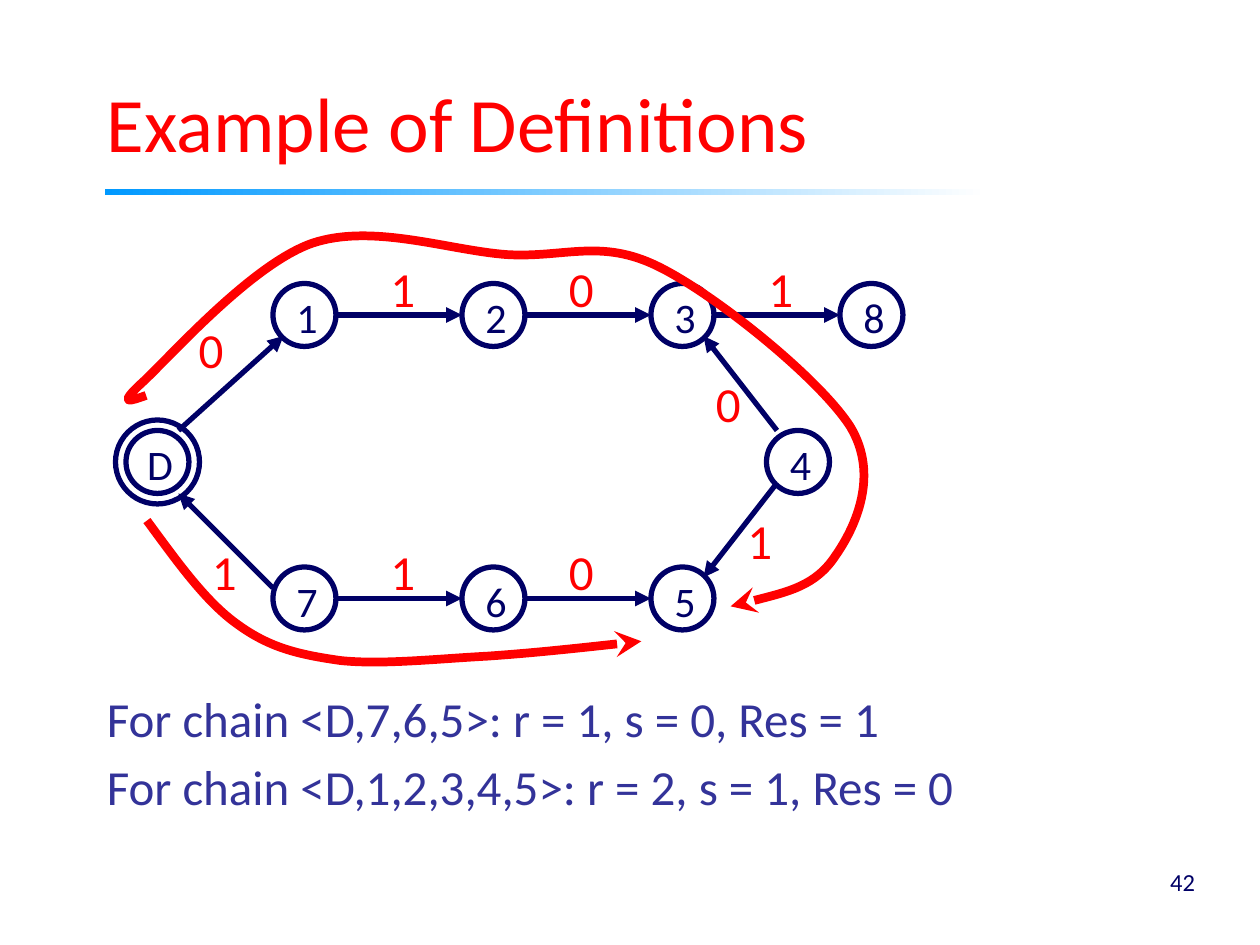
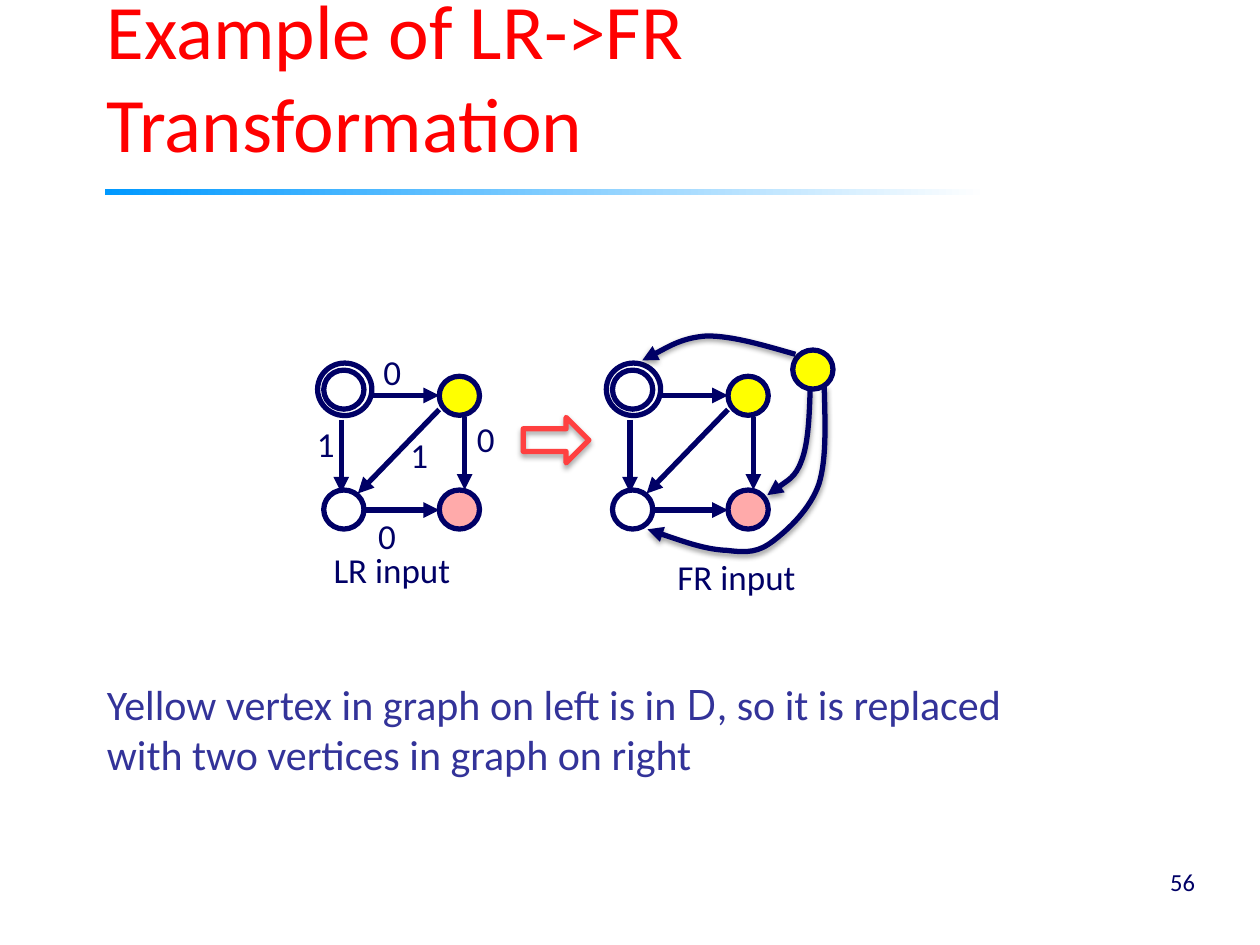
from pptx import Presentation
from pptx.dml.color import RGBColor
from pptx.enum.shapes import MSO_CONNECTOR, MSO_SHAPE
from pptx.enum.text import MSO_ANCHOR, PP_ALIGN
from pptx.oxml.ns import qn
from pptx.util import Pt
from lxml.etree import SubElement

NAVY, RED, INDIGO = "000066", "FF0000", "333399"
YELLOW, PINK, ARROW_RED = "FFFF00", "FFAAAA", "FF4040"
FORMATS = {
    "title": ({"size": Pt(44), "name": "Calibri"}, RED),
    "body": ({"size": Pt(28), "name": "Calibri"}, INDIGO),
    "note": ({"size": Pt(24), "name": "Calibri"}, INDIGO),
    "note symbol": ({"size": Pt(24), "name": "Open Sans"}, INDIGO),
    "number": ({"size": Pt(14), "name": "Calibri"}, NAVY),
    "node": ({"size": Pt(24), "name": "Calibri"}, NAVY),
    "bit": ({"size": Pt(28), "name": "Calibri"}, RED),
    "caption": ({"size": Pt(20), "name": "Calibri"}, NAVY),
}


def color(value):
    return RGBColor.from_string(value)


class Deck:
    """Hold the shared style and the current slide, and draw each kind of element."""

    def __init__(self):
        self.presentation = Presentation()
        self.presentation.slide_width = Pt(720)
        self.presentation.slide_height = Pt(540)
        self.slide = None

    def start_slide(self, title, number):
        self.slide = self.presentation.slides.add_slide(self.presentation.slide_layouts[6])
        rule = self.slide.shapes.add_shape(MSO_SHAPE.RECTANGLE, Pt(60), Pt(108), Pt(504), Pt(3.6))
        rule.shadow.inherit = False
        rule.line.fill.background()
        rule.fill.gradient()
        rule.fill.gradient_angle = 0
        for stop, value in zip(rule.fill.gradient_stops, ("0099FF", "FFFFFF")):
            stop.color.rgb = color(value)
        self.text(54, 12, 612, 87.4, [title], "title", vertical_anchor=MSO_ANCHOR.BOTTOM)
        self.text(540, 486, 150, 36, [number], "number", PP_ALIGN.RIGHT,
                  vertical_anchor=MSO_ANCHOR.MIDDLE)

    def add_words(self, paragraph, content, style):
        runs = [(content, style)] if isinstance(content, str) else content
        for words, run_style in runs:
            run = paragraph.add_run()
            run.text = words
            values, value = FORMATS[run_style]
            for key, setting in values.items():
                setattr(run.font, key, setting)
            run.font.color.rgb = color(value)

    def text(self, left, top, width, height, lines, style,
             alignment=PP_ALIGN.LEFT, space=0, **frame_values):
        shape = self.slide.shapes.add_textbox(Pt(left), Pt(top), Pt(width), Pt(height))
        frame = shape.text_frame
        for key, setting in ({"word_wrap": True} | frame_values).items():
            setattr(frame, key, setting)
        for index, content in enumerate(lines):
            paragraph = frame.add_paragraph() if index else frame.paragraphs[0]
            paragraph.alignment = alignment
            if index and space:
                paragraph.space_before = Pt(space)
            self.add_words(paragraph, content, style)

    def outline(self, shape, value, width=3):
        shape.line.color.rgb = color(value)
        shape.line.width = Pt(width)

    def add_head(self, shape, head):
        SubElement(shape._element.spPr.find(qn("a:ln")), qn("a:tailEnd"), type=head)

    def add_shadow(self, shape, alpha, distance):
        effects = shape._element.spPr.find(qn("a:effectLst"))
        shadow = SubElement(effects, qn("a:outerShdw"), blurRad=str(Pt(3.1)),
                            dist=str(Pt(distance)), dir="5400000", rotWithShape="0")
        black = SubElement(shadow, qn("a:srgbClr"), val="000000")
        SubElement(black, qn("a:alpha"), val=str(alpha * 1000))

    def shape(self, kind, left, top, width, height, line=NAVY, fill=None):
        shape = self.slide.shapes.add_shape(kind, Pt(left), Pt(top), Pt(width), Pt(height))
        shape.shadow.inherit = False
        if fill:
            shape.fill.solid()
            shape.fill.fore_color.rgb = color(fill)
        else:
            shape.fill.background()
        self.outline(shape, line)
        return shape

    def node(self, left, top, width, height, label="", fill=None):
        shape = self.shape(MSO_SHAPE.OVAL, left, top, width, height, fill=fill)
        if label:
            frame = shape.text_frame
            values = {"word_wrap": False, "vertical_anchor": MSO_ANCHOR.MIDDLE,
                      "margin_left": Pt(3), "margin_right": 0,
                      "margin_top": Pt(2), "margin_bottom": 0}
            for key, setting in values.items():
                setattr(frame, key, setting)
            frame.paragraphs[0].alignment = PP_ALIGN.CENTER
            self.add_words(frame.paragraphs[0], label, "node")

    def edge(self, *ends):
        connector = self.slide.shapes.add_connector(MSO_CONNECTOR.STRAIGHT, *map(Pt, ends))
        self.outline(connector, NAVY)
        self.add_head(connector, "triangle")
        SubElement(connector._element.spPr, qn("a:effectLst"))

    def curve(self, points, line=NAVY, width=3, head="triangle"):
        """Draw a chain of Bézier arcs: a start, then two handles and an end for each arc."""
        start, *rest = [(Pt(x), Pt(y)) for x, y in points]
        builder = self.slide.shapes.build_freeform(*start)
        builder.add_line_segments(rest, close=False)
        shape = builder.convert_to_shape()
        outline = next(shape._element.iter(qn("a:path")))
        for index, segment in enumerate(outline.findall(qn("a:lnTo"))):
            if index % 3 == 0:
                arc = SubElement(outline, qn("a:cubicBezTo"))
            arc.append(segment[0])
            outline.remove(segment)
        shape.shadow.inherit = False
        shape.fill.background()
        self.outline(shape, line, width)
        self.add_head(shape, head)
        return shape


def definitions_slide(deck):
    deck.start_slide("Example of Definitions", "42")
    deck.text(54, 390, 621, 84, ["For chain <D,7,6,5>: r = 1, s = 0, Res = 1",
                                 "For chain <D,1,2,3,4,5>: r = 2, s = 1, Res = 0"],
              "body", space=5)

    first, step, size = 156, 108, 36
    for top, labels, bits in ((162, "1238", "101"), (324, "765", "10")):
        for column, label in enumerate(labels):
            deck.node(first + column * step, top, size, size, label)
        for column, bit in enumerate(bits):
            left = first + size + column * step
            middle = top + size / 2
            deck.edge(left, middle, left + step - size, middle)
            deck.text(left + (24 if bit == "1" else 18), top - 18, 30, 36, [bit], "bit")
    deck.node(72, 246, size, size, "D")
    deck.node(66, 240, 48, 48)
    deck.node(438, 246, size, size, "4")

    for ends in ((102, 246, 162, 192), (156, 336, 102, 282),
                 (444, 246, 402, 192), (444, 276, 402, 330)):
        deck.edge(*ends)
    for bit, left, top in (("0", 106.5, 179), ("1", 114, 306), ("0", 402, 210), ("1", 420, 288)):
        deck.text(left, top, 30, 36, [bit], "bit")

    upper_chain = [(83.5, 226), (75, 229), (66, 232.5), (82, 218), (98, 203), (144, 151),
                   (178.5, 139), (213, 127.5), (256, 143), (289.5, 145.5), (322.5, 147.5),
                   (343.5, 136), (376.5, 152.5), (409, 168.5), (468.5, 216.5), (486, 244),
                   (502.5, 271.5), (489, 301), (477.5, 317.5), (466, 335), (442, 340.5),
                   (417.5, 346.5)]
    lower_chain = [(84, 297.5), (101, 320.5), (117.5, 344), (136, 357), (154, 370), (170, 374),
                   (194.5, 377.5), (218, 380), (250, 376.5), (278.5, 375), (307.5, 373),
                   (366.5, 366.5), (366.5, 366.5)]
    for chain in (upper_chain, lower_chain):
        deck.curve(chain, RED, 5, "stealth")


def square_graph(deck, left):
    """Draw the four-vertex graph with its outer ring starting at left."""
    right = left + 69.5
    deck.node(left, 207.5, 31, 30)
    for x, y, fill in ((left + 3.5, 211.5, None), (left + 3.5, 280, None),
                       (right, 215, YELLOW), (right, 280, PINK)):
        deck.node(x, y, 23, 22.3, fill=fill)
    for ends in ((left + 31, 226, right, 226), (left + 27.5, 291.5, right, 291.5),
                 (right + 14.5, 238.5, right + 14.5, 280), (right, 234, left + 23, 282),
                 (left + 13.5, 240, left + 13.5, 281.5)):
        deck.edge(*ends)


def transformation_slide(deck):
    deck.start_slide("Example of LR->FR Transformation", "56")
    for left in (181.5, 346.5):
        square_graph(deck, left)
    for bit, left, top in (("0", 212, 197), ("0", 265.5, 235), ("0", 209, 290.5),
                           ("1", 174, 238), ("1", 227.5, 244)):
        deck.text(left, top, 30, 32, [bit], "caption")
    for caption, left, top in (("LR input", 183.5, 310), ("FR input", 380, 314)):
        deck.text(left, top, 95, 32, [caption], "caption")

    arrow = deck.shape(MSO_SHAPE.RIGHT_ARROW, 299, 238.5, 37.5, 26, ARROW_RED)
    deck.add_shadow(arrow, 35, 1.8)
    deck.node(453, 200, 23, 22.3, fill=YELLOW)
    to_ring = [(454.5, 202.5), (437, 197.5), (419, 192), (404, 192),
               (389.5, 193), (367, 206), (367, 206)]
    to_pink = [(463, 222.5), (462.5, 237.5), (462, 253.5), (458, 263.5),
               (454.5, 273), (438.5, 283), (438.5, 283)]
    to_white = [(471, 220.5), (471.5, 241), (472.5, 262), (468, 276.5),
                (463, 291), (450.5, 302.5), (442, 309), (433.5, 315.5), (427.5, 316),
                (415.5, 314.5), (403, 314), (386.5, 308), (370, 302.5)]
    for points in (to_ring, to_pink, to_white):
        deck.add_shadow(deck.curve(points), 38, 1.6)

    deck.text(54, 384, 580, 66, [
        [("Yellow vertex in graph on left is in ", "note"), ("D", "note symbol"),
         (", so it is replaced", "note")],
        "with two vertices in graph on right"], "note")


def main():
    deck = Deck()
    definitions_slide(deck)
    transformation_slide(deck)
    deck.presentation.save("out.pptx")


if __name__ == "__main__":
    main()
